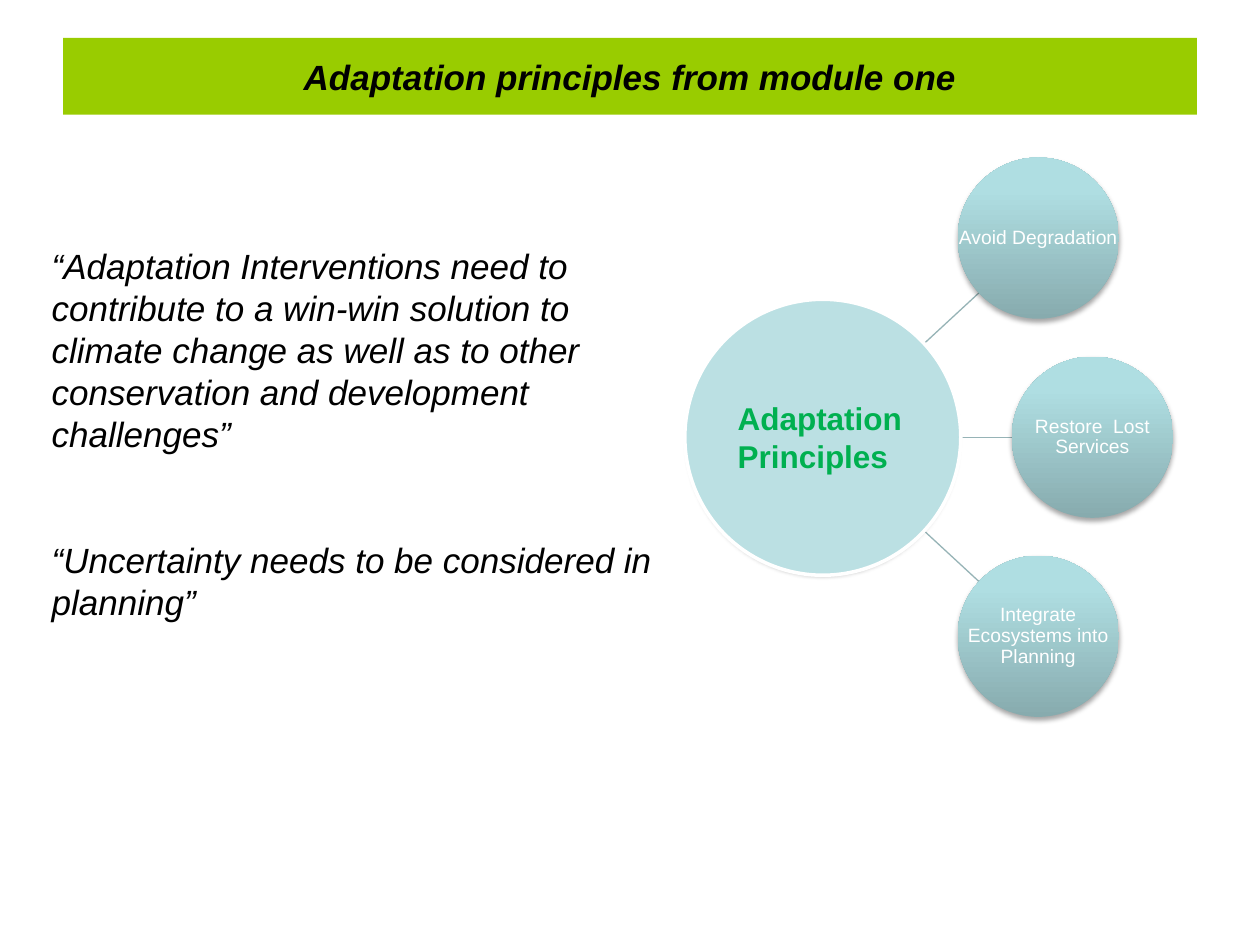
from math import hypot

from lxml import etree
from pptx import Presentation
from pptx.dml.color import RGBColor
from pptx.enum.shapes import MSO_CONNECTOR as LINE, MSO_SHAPE as SHAPE
from pptx.enum.text import MSO_ANCHOR as ANCHOR, MSO_AUTO_SIZE as FIT, PP_ALIGN as ALIGN
from pptx.oxml import parse_xml
from pptx.oxml.ns import nsdecls, qn
from pptx.util import Inches, Pt

HEX = {"bar": "99CC00", "ink": "000000", "hub": "BBE0E3", "rim": "FFFFFF",
       "name": "00B050", "label": "FFFFFF", "spoke": "96B3B6"}
STOPS = [(0, "87ABAE"), (80, "AFDEE2"), (100, "AFE0E4")]
QUOTES = [
    "“Adaptation Interventions need to contribute to a win-win solution to climate "
    "change as well as to other conservation and development challenges”",
    "“Uncertainty needs to be considered in planning”",
]
# Label and offset of each ball's centre from the hub's centre
BALLS = [("Avoid Degradation", 1.71, -1.58),
         ("Restore  Lost Services", 2.14, 0),
         ("Integrate Ecosystems into Planning", 1.71, 1.58)]


def color(key):
    return RGBColor.from_string(HEX[key])


def put(item, values):
    for key, value in values.items():
        setattr(item, key, value)


def place(shape, box):
    put(shape, dict(zip(("left", "top", "width", "height"), map(Inches, box))))


def style(par, ink, size, **font):
    put(par.font, {"name": "Arial", "size": Pt(size), **font})
    par.font.color.rgb = color(ink)


def add_title(slide, box):
    title = slide.shapes.title
    place(title, box)
    title.fill.solid()
    title.fill.fore_color.rgb = color("bar")
    frame = title.text_frame
    frame.text = "Adaptation principles from module one"
    put(frame, {"vertical_anchor": ANCHOR.MIDDLE, "auto_size": FIT.NONE})
    par = frame.paragraphs[0]
    par.alignment = ALIGN.CENTER
    style(par, "ink", 20, bold=True, italic=True)


def add_quotes(slide, box):
    body = slide.placeholders[1]
    place(body, box)
    frame = body.text_frame
    frame.text = "\n".join(QUOTES)
    put(frame, {"auto_size": FIT.NONE, "word_wrap": True,
                "vertical_anchor": ANCHOR.TOP, "margin_top": Inches(0.38)})
    for i, par in enumerate(frame.paragraphs):
        props = par._p.get_or_add_pPr()
        put(par, {"alignment": ALIGN.LEFT, "space_before": Pt(48 * i)})
        props.set("marL", "0")
        props.set("indent", "0")
        etree.SubElement(props, qn("a:buNone"))
        style(par, "ink", 20, italic=True)


def add_disc(slide, x, y, size):
    """Circle centred on x, y."""
    box = (x - size / 2, y - size / 2, size, size)
    disc = slide.shapes.add_shape(SHAPE.OVAL, *map(Inches, box))
    disc.shadow.inherit = False
    disc.line.fill.background()
    return disc


def shade(disc):
    """Gradient fill, dark at the foot, with a soft shadow below."""
    stops = "".join(f'<a:gs pos="{pos * 1000}"><a:srgbClr val="{rgb}"/></a:gs>'
                    for pos, rgb in STOPS)
    grad = parse_xml(f'<a:gradFill {nsdecls("a")} rotWithShape="1"><a:gsLst>{stops}</a:gsLst>'
                     '<a:lin ang="16200000" scaled="0"/></a:gradFill>')
    props = disc._element.spPr
    props.find(qn("a:prstGeom")).addnext(grad)
    props.find(qn("a:effectLst")).append(parse_xml(
        f'<a:outerShdw {nsdecls("a")} blurRad="{Pt(3.1)}" dist="{Pt(1.8)}" dir="5400000" '
        'rotWithShape="0"><a:srgbClr val="000000"><a:alpha val="35000"/></a:srgbClr>'
        '</a:outerShdw>'))


def add_spoke(slide, x, y, dx, dy, start, gap):
    """Line from start inches off the hub's centre to gap short of the ball's."""
    span = hypot(dx, dy)
    ends = [(x + dx * k, y + dy * k) for k in (start / span, 1 - gap / span)]
    line = slide.shapes.add_connector(LINE.STRAIGHT, *map(Inches, ends[0] + ends[1]))
    line.line.color.rgb = color("spoke")
    line.line.width = Pt(0.75)
    etree.SubElement(line._element.spPr, qn("a:effectLst"))


def add_ball(slide, text, x, y, size):
    shade(add_disc(slide, x, y, size))
    box = (x - size / 2, y - size / 2, size, size)
    frame = slide.shapes.add_textbox(*map(Inches, box)).text_frame
    put(frame, {"text": text, "word_wrap": True, "vertical_anchor": ANCHOR.MIDDLE})
    put(frame, {f"margin_{side}": Inches(0.01) for side in ("left", "top", "right", "bottom")})
    par = frame.paragraphs[0]
    put(par, {"alignment": ALIGN.CENTER, "line_spacing": 0.9})
    style(par, "label", 11)


def add_hub(slide, x, y, size):
    hub = add_disc(slide, x, y, size)
    hub.fill.solid()
    hub.fill.fore_color.rgb = color("hub")
    hub.line.color.rgb = color("rim")
    hub.line.width = Pt(2)
    frame = hub.text_frame
    put(frame, {"text": "Adaptation Principles", "word_wrap": True,
                "vertical_anchor": ANCHOR.MIDDLE})
    par = frame.paragraphs[0]
    par.alignment = ALIGN.LEFT
    style(par, "name", 18, bold=True)


def add_wheel(slide, box):
    """Hub at the left of the box, with balls spread around its right side."""
    left, top, _, height = box
    hub, ball = 2.14, 1.28
    x, y = left + hub / 2, top + height / 2
    for _, dx, dy in BALLS:
        add_spoke(slide, x, y, dx, dy, 1, ball / 2)
    shade(add_disc(slide, x, y, hub))
    for text, dx, dy in BALLS:
        add_ball(slide, text, x + dx, y + dy, ball)
    add_hub(slide, x, y, hub + 0.05)


def main():
    deck = Presentation()
    put(deck, {"slide_width": Inches(10), "slide_height": Inches(7.5)})
    slide = deck.slides.add_slide(deck.slide_layouts[1])
    add_title(slide, (0.5, 0.3, 9, 0.61))
    add_quotes(slide, (0.31, 1.56, 5, 3.47))
    add_wheel(slide, (5.46, 1.25, 3.85, 4.44))
    deck.save("out.pptx")


if __name__ == "__main__":
    main()
